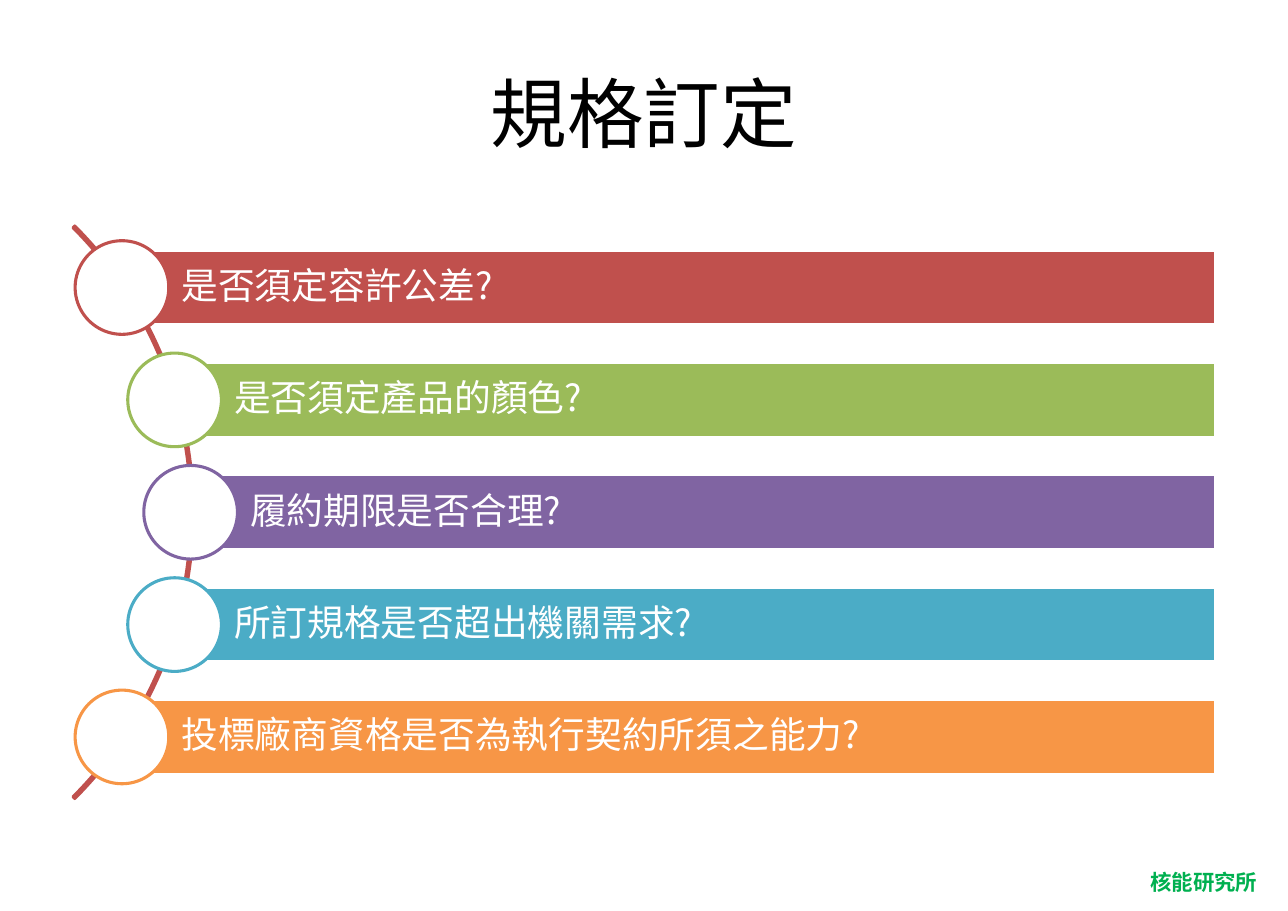
from math import sqrt
from lxml.etree import SubElement
from pptx import Presentation
from pptx.dml.color import RGBColor
from pptx.enum.shapes import MSO_SHAPE
from pptx.enum.text import MSO_ANCHOR, PP_ALIGN
from pptx.oxml.ns import qn
from pptx.util import Inches, Pt

TITLE = "規格訂定"
OWNER = "核能研究所"
ITEMS = [
    ("是否須定容許公差?", "red"),
    ("是否須定產品的顏色?", "lime"),
    ("履約期限是否合理?", "plum"),
    ("所訂規格是否超出機關需求?", "aqua"),
    ("投標廠商資格是否為執行契約所須之能力?", "gold"),
]
COLORS = {
    "red": "C0504D", "lime": "9BBB59", "plum": "8064A2", "aqua": "4BACC6",
    "gold": "F79646", "white": "FFFFFF", "black": "000000", "green": "00B050",
}
FONT = "Noto Sans CJK SC"
WIDE, HIGH = 11.69, 8.27
HUB_X, HUB_Y = -1.92, 4.65
ARC, ORBIT = 7.35, 3.65
PITCH, BAR, DOT = 1.02, 0.68, 0.85
RIGHT = 11.03


def color(name):
    return RGBColor.from_string(COLORS[name])


def write(shape, text, size, ink, bold=False, align=PP_ALIGN.LEFT,
          inset=(0.1, 0.05, 0.1, 0.05), wrap=True, lead=None):
    frame = shape.text_frame
    frame.word_wrap = wrap
    frame.vertical_anchor = MSO_ANCHOR.MIDDLE
    (frame.margin_left, frame.margin_top,
     frame.margin_right, frame.margin_bottom) = map(Inches, inset)
    para = frame.paragraphs[0]
    para.alignment = align
    para.line_spacing = lead
    run = para.add_run()
    run.text = text
    font = run.font
    font.size, font.bold, font.name = Pt(size), bold, FONT
    font.color.rgb = color(ink)
    SubElement(run._r.get_or_add_rPr(), qn("a:ea"), typeface=FONT)


def draw(slide, kind, box, line, fill=None):
    shape = slide.shapes.add_shape(kind, *map(Inches, box))
    shape.shadow.inherit = False
    if fill:
        shape.fill.solid()
        shape.fill.fore_color.rgb = color(fill)
    else:
        shape.fill.background()
    shape.line.color.rgb = color(line)
    shape.line.width = Pt(2)
    return shape


def main():
    deck = Presentation()
    deck.slide_width, deck.slide_height = Inches(WIDE), Inches(HIGH)
    slide = deck.slides.add_slide(deck.slide_layouts[5])

    title = slide.shapes.title
    title.left, title.top, title.width, title.height = map(
        Inches, (WIDE * 0.05, HIGH * 0.04, WIDE * 0.9, HIGH / 6))
    write(title, TITLE, 50, "black", align=PP_ALIGN.CENTER)

    arc = draw(slide, MSO_SHAPE.BLOCK_ARC,
               (HUB_X - ARC / 2, HUB_Y - ARC / 2, ARC, ARC), "red")
    for spot, value in enumerate((189, 27, 0.003)):
        arc.adjustments[spot] = value

    for row, (text, tone) in enumerate(ITEMS):
        rise = (row - len(ITEMS) // 2) * PITCH
        x, y = HUB_X + sqrt(ORBIT ** 2 - rise ** 2), HUB_Y + rise
        bar = draw(slide, MSO_SHAPE.RECTANGLE,
                   (x, y - BAR / 2, RIGHT - x, BAR), "white", tone)
        write(bar, text, 24, "white", inset=(0.54, 0.07, 0.07, 0.07), lead=0.9)
        draw(slide, MSO_SHAPE.OVAL,
             (x - DOT / 2, y - DOT / 2, DOT, DOT), tone, "white")

    owner = slide.shapes.add_textbox(
        *map(Inches, (10.34, 7.84, 1.18, 0.34)))
    write(owner, OWNER, 14, "green", bold=True, wrap=False)
    deck.save("out.pptx")


if __name__ == "__main__":
    main()
